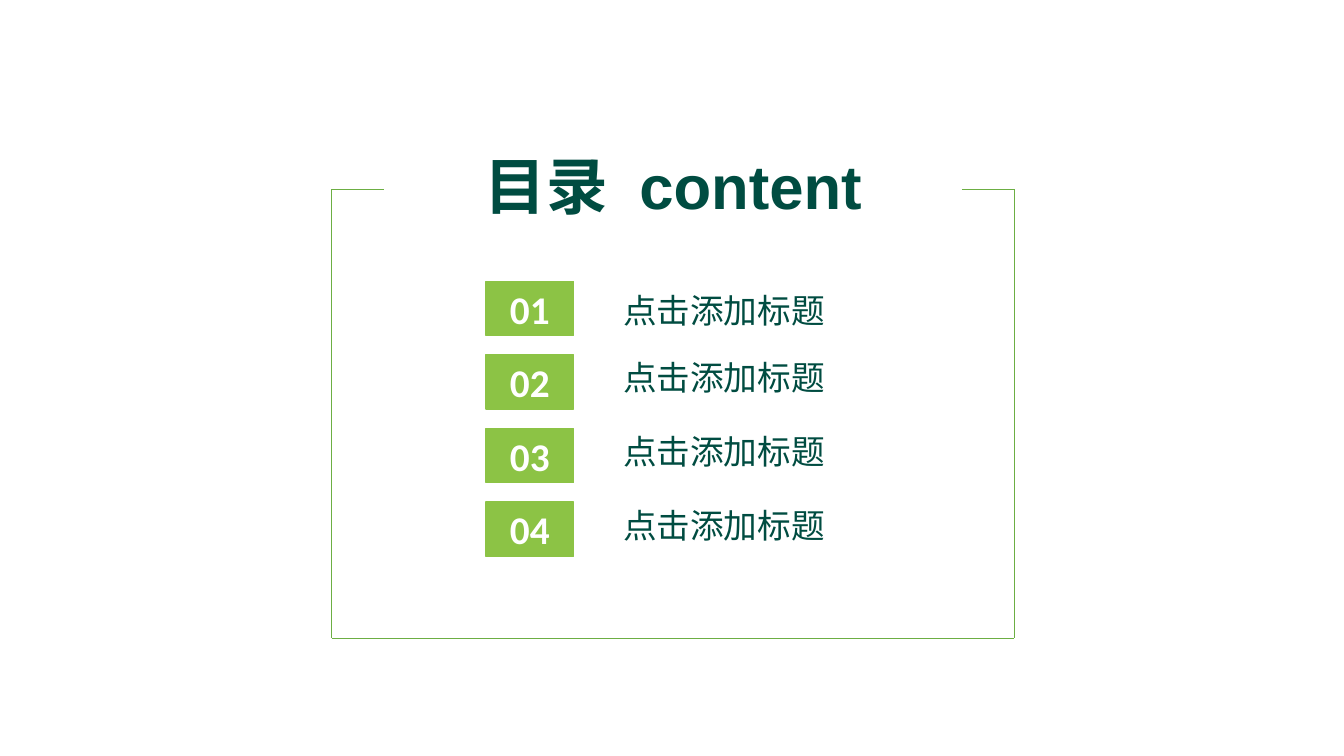
from lxml import etree
from pptx import Presentation
from pptx.dml.color import RGBColor
from pptx.enum.shapes import MSO_CONNECTOR, MSO_SHAPE
from pptx.enum.text import MSO_ANCHOR, PP_ALIGN
from pptx.oxml.ns import qn
from pptx.util import Inches, Pt

STRAIGHT = MSO_CONNECTOR.STRAIGHT
RECTANGLE = MSO_SHAPE.RECTANGLE
MIDDLE, TOP = MSO_ANCHOR.MIDDLE, MSO_ANCHOR.TOP
CENTER, JUSTIFY = PP_ALIGN.CENTER, PP_ALIGN.JUSTIFY

DARK, GREEN, FRAME, WHITE = "004C41", "8CC345", "6CAE43", "FFFFFF"
CJK_FONT = "Noto Sans CJK SC"
LEFT, RIGHT, FRAME_TOP, BOTTOM, STUB = 3.29, 10.06, 1.88, 6.33, 0.52
ROW_TOP, ROW_STEP = 2.79, 0.73
ITEMS = [
    ("01", "点击添加标题", 2.82, 4.77),
    ("02", "点击添加标题", 3.49, 4.51),
    ("03", "点击添加标题", 4.22, 4.51),
    ("04", "点击添加标题", 4.95, 4.51),
]


def rgb(value):
    """Return the colour for a hex string."""
    return RGBColor.from_string(value)


def add_run(p, text, *, size, color, font, bold=False, spacing=0):
    """Add a formatted run, with optional letter spacing in points."""
    r = p.add_run()
    r.text = text
    r.font.size = Pt(size)
    r.font.bold = bold
    r.font.name = font
    r.font.color.rgb = rgb(color)
    rPr = r.font._element
    etree.SubElement(rPr, qn("a:ea")).set("typeface", CJK_FONT)
    if spacing:
        rPr.set("spc", str(round(spacing * 100)))


def set_frame(tf, align, anchor=MIDDLE, margin=0):
    """Set up a text frame and return its first paragraph."""
    tf.word_wrap = True
    tf.vertical_anchor = anchor
    if margin is not None:
        tf.margin_left = tf.margin_right = Inches(margin)
        tf.margin_top = tf.margin_bottom = Inches(margin)
    p = tf.paragraphs[0]
    p.alignment = align
    return p


def add_line(s, x1, y1, x2, y2):
    """Draw one thin line of the frame."""
    line = s.shapes.add_connector(
        STRAIGHT, Inches(x1), Inches(y1), Inches(x2), Inches(y2))
    line.line.color.rgb = rgb(FRAME)
    line.line.width = Pt(0.5)
    etree.SubElement(line._element.spPr, qn("a:effectLst"))


def add_frame(s):
    """Draw the frame, open at the top for the title."""
    add_line(s, LEFT, FRAME_TOP, LEFT, BOTTOM)
    add_line(s, LEFT, BOTTOM, RIGHT, BOTTOM)
    add_line(s, RIGHT, FRAME_TOP, RIGHT, BOTTOM)
    add_line(s, LEFT, FRAME_TOP, LEFT + STUB, FRAME_TOP)
    add_line(s, RIGHT - STUB, FRAME_TOP, RIGHT, FRAME_TOP)


def add_title(s):
    """Add the two-language title."""
    sp = s.shapes.add_textbox(
        Inches(4.57), Inches(1.42), Inches(4.22), Inches(0.84))
    p = set_frame(sp.text_frame, CENTER, TOP, None)
    style = dict(size=44, color=DARK, font="Arial", bold=True)
    add_run(p, "目录", **style)
    add_run(p, " ", spacing=12.2, **style)
    add_run(p, "content", **style)


def add_number(s, top, text):
    """Add a numbered tile."""
    sp = s.shapes.add_shape(
        RECTANGLE, Inches(4.82), Inches(top), Inches(0.87), Inches(0.54))
    sp.shadow.inherit = False
    sp.fill.solid()
    sp.fill.fore_color.rgb = rgb(GREEN)
    sp.line.color.rgb = rgb(GREEN)
    sp.line.width = Pt(1)
    p = set_frame(sp.text_frame, CENTER)
    add_run(p, text, size=28, color=WHITE, font="Calibri", bold=True)


def add_label(s, top, width, text):
    """Add the heading beside a tile."""
    sp = s.shapes.add_textbox(
        Inches(6.18), Inches(top), Inches(width), Inches(0.51))
    p = set_frame(sp.text_frame, JUSTIFY)
    add_run(p, text, size=24, color=DARK, font=CJK_FONT)


def main():
    """Build the contents slide."""
    prs = Presentation()
    prs.slide_width, prs.slide_height = Inches(13.33), Inches(7.5)
    s = prs.slides.add_slide(prs.slide_layouts[6])
    add_frame(s)
    add_title(s)
    for i, (number, label, top, width) in enumerate(ITEMS):
        add_number(s, ROW_TOP + i * ROW_STEP, number)
        add_label(s, top, width, label)
    prs.save("out.pptx")


if __name__ == "__main__":
    main()
